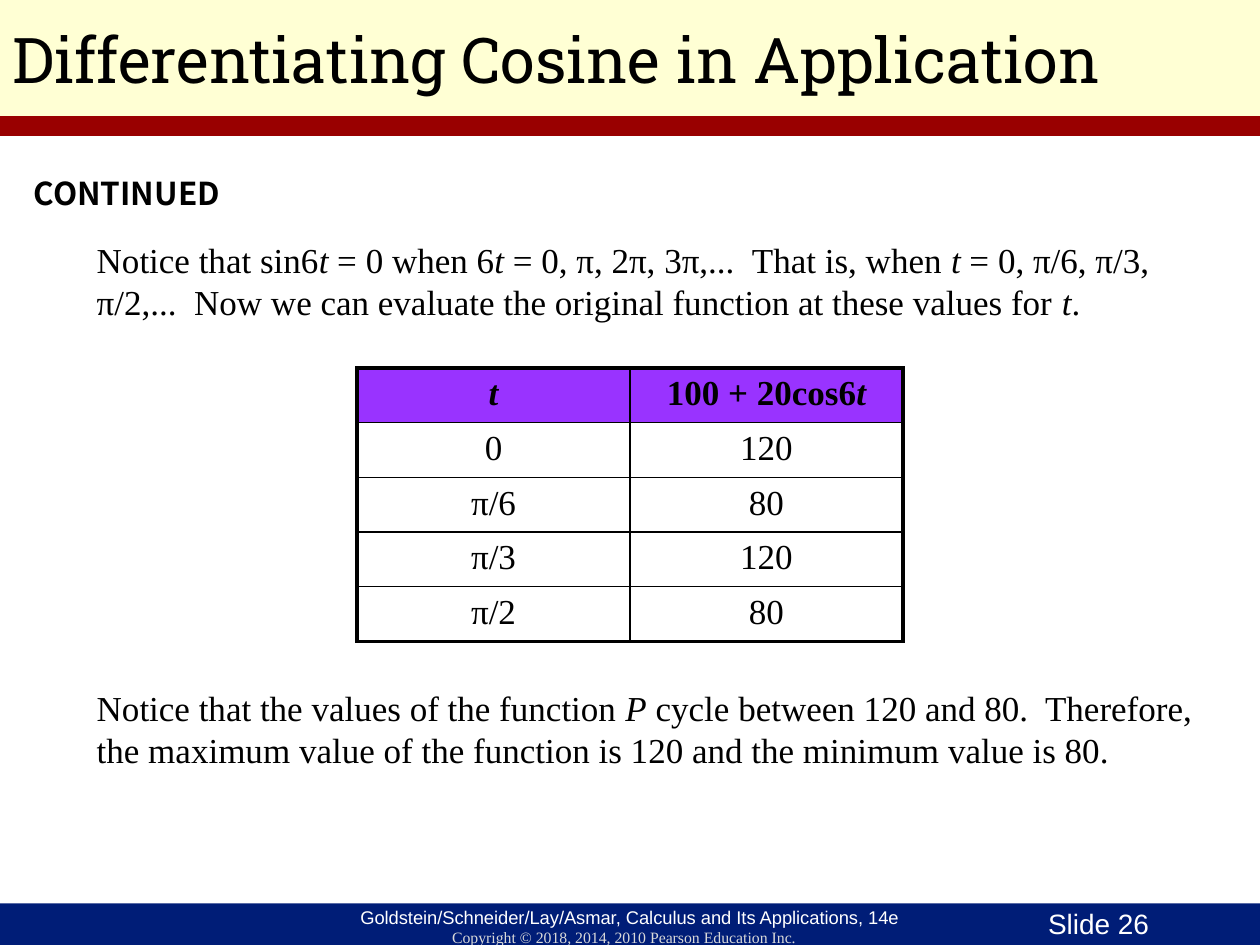
from lxml import etree
from pptx import Presentation
from pptx.dml.color import RGBColor
from pptx.enum.shapes import MSO_SHAPE
from pptx.enum.text import MSO_ANCHOR, MSO_AUTO_SIZE, PP_ALIGN
from pptx.oxml.ns import qn
from pptx.util import Cm, Pt

RECTANGLE = MSO_SHAPE.RECTANGLE
MIDDLE, TOP = MSO_ANCHOR.MIDDLE, MSO_ANCHOR.TOP
LEFT, CENTER = PP_ALIGN.LEFT, PP_ALIGN.CENTER
NO_AUTOFIT = MSO_AUTO_SIZE.NONE

BLACK = RGBColor(0x00, 0x00, 0x00)
WHITE = RGBColor(0xFF, 0xFF, 0xFF)
SILVER = RGBColor(0xD9, 0xD9, 0xD9)
CREAM = RGBColor(0xFF, 0xFF, 0xCC)
MAROON = RGBColor(0x99, 0x00, 0x00)
NAVY = RGBColor(0x00, 0x1D, 0x77)
PURPLE = RGBColor(0x99, 0x33, 0xFF)

SERIF, SANS = "Times New Roman", "Arial"
TITLE_FONT, LABEL_FONT = "Roboto Slab", "Noto Sans CJK KR"

SLIDE_WIDTH, SLIDE_HEIGHT = Cm(25.4), Cm(19.05)
THIN, THICK = Pt(1), Pt(2.25)

FUNCTION_VALUES = [
    ("*t*", "100 + 20cos6*t*"),
    ("0", "120"),
    ("π/6", "80"),
    ("π/3", "120"),
    ("π/2", "80"),
]


def write(frame, text, size, font=SERIF, color=BLACK, bold=False, align=LEFT):
    """Fill the first paragraph; parts between asterisks become italic."""
    paragraph = frame.paragraphs[0]
    paragraph.alignment = align
    for index, part in enumerate(text.split("*")):
        if part:
            run = paragraph.add_run()
            run.text = part
            run.font.size = Pt(size)
            run.font.name = font
            run.font.color.rgb = color
            run.font.bold = bold
            run.font.italic = index % 2 == 1


def add_text(slide, box, text, size, **style):
    frame = slide.shapes.add_textbox(*box).text_frame
    frame.word_wrap = True
    write(frame, text, size, **style)


def add_band(slide, box, color):
    band = slide.shapes.add_shape(RECTANGLE, *box)
    band.shadow.inherit = False
    band.fill.solid()
    band.fill.fore_color.rgb = color
    band.line.fill.background()


def add_header(slide, left, top, width, height):
    title_height = Cm(2.34)
    title = slide.shapes.title
    title.left, title.top, title.width, title.height = left, top, width, title_height
    title.fill.solid()
    title.fill.fore_color.rgb = CREAM
    cream = title.fill._xPr.find(f"{qn('a:solidFill')}/{qn('a:srgbClr')}")
    etree.SubElement(cream, qn("a:alpha"), val="84000")
    frame = title.text_frame
    frame.auto_size = NO_AUTOFIT
    frame.vertical_anchor = MIDDLE
    write(frame, "Differentiating Cosine in Application", 36, font=TITLE_FONT)

    add_band(slide, (left, top + title_height, width, height - title_height), MAROON)


def set_border(cell, side, width):
    line = etree.SubElement(cell._tc.get_or_add_tcPr(), qn(f"a:ln{side}"), w=str(width))
    fill = etree.SubElement(line, qn("a:solidFill"))
    etree.SubElement(fill, qn("a:srgbClr"), val=str(BLACK))


def add_function_table(slide, left, top, width, height):
    row_count, column_count = len(FUNCTION_VALUES), len(FUNCTION_VALUES[0])
    table = slide.shapes.add_table(
        row_count, column_count, left, top, width, height).table
    table.first_row = table.horz_banding = False
    for row, values in enumerate(FUNCTION_VALUES):
        is_heading = row == 0
        for column, value in enumerate(values):
            cell = table.cell(row, column)
            outer_edges = {
                "L": column == 0,
                "R": column == column_count - 1,
                "T": is_heading,
                "B": row == row_count - 1,
            }
            for side, is_outer in outer_edges.items():
                set_border(cell, side, THICK if is_outer else THIN)
            if is_heading:
                cell.fill.solid()
                cell.fill.fore_color.rgb = PURPLE
            else:
                cell.fill.background()
            cell.vertical_anchor = TOP
            write(cell.text_frame, value, 20, bold=is_heading, align=CENTER)


def add_content(slide, left, top, width, height):
    add_text(slide, (left + Cm(0.43), top + Cm(0.64), Cm(4.45), Cm(1.02)),
             "CONTINUED", 18, font=LABEL_FONT, bold=True)

    text_left, text_width, text_height = left + Cm(1.7), Cm(23.29), Cm(1.96)
    add_text(slide, (text_left, top + Cm(1.95), text_width, text_height),
             "Notice that sin6*t* = 0 when 6*t* = 0, π, 2π, 3π,...  That is, when "
             "*t* = 0, π/6, π/3, π/2,...  Now we can evaluate the original function "
             "at these values for *t*.", 20)

    table_width = Cm(11)
    add_function_table(slide, left + (width - table_width) // 2, top + Cm(4.68),
                       table_width, Cm(5.5))

    add_text(slide, (text_left, top + height - Cm(4.49), text_width, text_height),
             "Notice that the values of the function *P* cycle between 120 and 80.  "
             "Therefore, the maximum value of the function is 120 and the minimum "
             "value is 80.", 20)


def add_footer(slide, left, top, width, height):
    add_band(slide, (left, top, width, height), NAVY)
    add_text(slide, (left + Cm(7.52), top + Cm(0.36), Cm(10.11), Cm(0.69)),
             "Copyright © 2018, 2014, 2010 Pearson Education Inc.", 9,
             color=SILVER, align=CENTER)
    add_text(slide, (left + Cm(20.88), top - Cm(0.05), Cm(3.3), Cm(1.07)),
             "Slide 26", 16, font=SANS, color=WHITE)
    add_text(slide, (left + Cm(5.08), top - Cm(0.07), Cm(15.24), Cm(0.71)),
             "Goldstein/Schneider/Lay/Asmar, Calculus and Its Applications, 14e", 10.5,
             font=SANS, color=WHITE, align=CENTER)


def main():
    presentation = Presentation()
    presentation.slide_width, presentation.slide_height = SLIDE_WIDTH, SLIDE_HEIGHT
    title_only = presentation.slide_layouts[5]
    slide = presentation.slides.add_slide(title_only)

    header_height, footer_height = Cm(2.74), Cm(0.84)
    footer_top = SLIDE_HEIGHT - footer_height
    add_header(slide, 0, 0, SLIDE_WIDTH, header_height)
    add_content(slide, 0, header_height, SLIDE_WIDTH, footer_top - header_height)
    add_footer(slide, 0, footer_top, SLIDE_WIDTH, footer_height)
    presentation.save("out.pptx")


if __name__ == "__main__":
    main()
